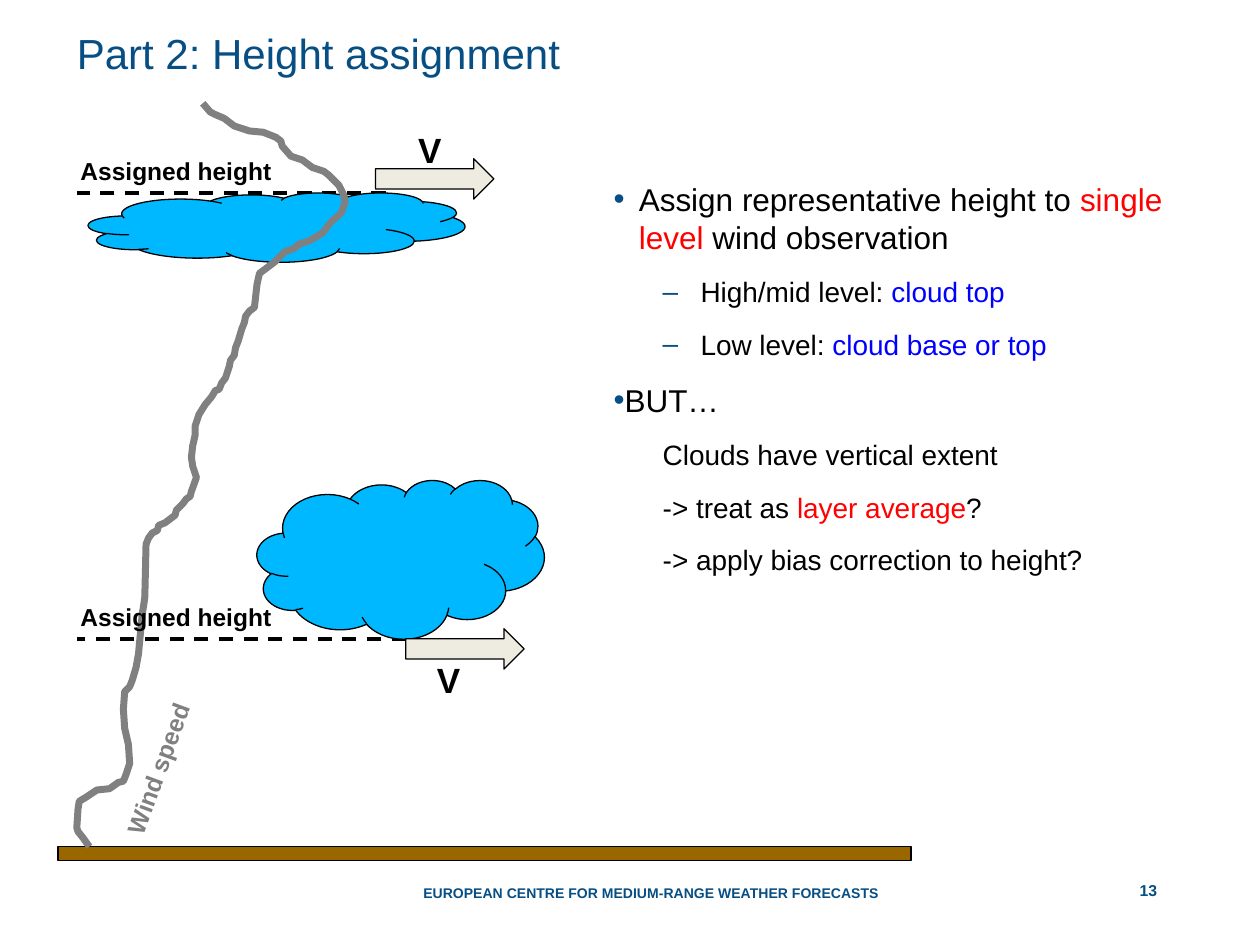
from dataclasses import dataclass, field

from lxml import etree
from pptx import Presentation
from pptx import util as u
from pptx.dml.color import RGBColor
from pptx.enum import dml, shapes, text
from pptx.oxml.ns import qn

FONT = "Arial"
BLACK, RED, BLUE = "000000", "FF0000", "0000FF"
NAVY, GREY = "064E83", "808080"
SKY, SOIL, CREAM = "00B8FF", "996600", "EEECE1"
PLAIN_FRAME = dict(margin_left=0, margin_top=0, margin_right=0, margin_bottom=0)


@dataclass
class Label:
    wording: str
    box: tuple
    size: float
    colour: str = BLACK
    rotation: float = 0
    align: text.PP_ALIGN = text.PP_ALIGN.LEFT
    frame: dict = field(default_factory=dict)


@dataclass
class Solid:
    kind: shapes.MSO_SHAPE
    box: tuple
    fill: str


@dataclass
class Style:
    size: int
    line: int
    before: int
    margin: float
    indent: float
    level: int = 0
    bullet: str = ""


TOPIC = Style(18, 22, 11, 0.2, -0.2, bullet="•")
SUBTOPIC = Style(16, 20, 10, 0.69, -0.3, 1, "–")
CONTRAST = Style(18, 22, 11, 0, -0.2, bullet="•")
REMARK = Style(16, 20, 10, 0.39, 0, 1)

BODY = [
    (TOPIC, [("Assign representative height to ", BLACK), ("single level", RED),
             (" wind observation", BLACK)]),
    (SUBTOPIC, [("High/mid level: ", BLACK), ("cloud top", BLUE)]),
    (SUBTOPIC, [("Low level:", BLACK), (" cloud base or top", BLUE)]),
    (CONTRAST, [("BUT…", BLACK)]),
    (REMARK, [("Clouds have vertical extent", BLACK)]),
    (REMARK, [("-> treat as ", BLACK), ("layer average", RED), ("?", BLACK)]),
    (REMARK, [("-> apply bias correction to height?", BLACK)]),
]

SOLIDS = [
    Solid(shapes.MSO_SHAPE.CLOUD, (0.7, 1.53, 2.99, 0.55), SKY),
    Solid(shapes.MSO_SHAPE.CLOUD, (2.04, 3.81, 2.28, 1.26), SKY),
    Solid(shapes.MSO_SHAPE.RECTANGLE, (0.46, 6.72, 6.77, 0.11), SOIL),
    Solid(shapes.MSO_SHAPE.RIGHT_ARROW, (3.22, 4.99, 0.94, 0.32), CREAM),
]
UPPER_ARROW = Solid(shapes.MSO_SHAPE.RIGHT_ARROW, (2.98, 1.26, 0.94, 0.32), CREAM)

GROW = dict(auto_size=text.MSO_AUTO_SIZE.SHAPE_TO_FIT_TEXT)
BOTTOM = dict(PLAIN_FRAME, vertical_anchor=text.MSO_ANCHOR.BOTTOM)
FOOTERS = [
    Label("EUROPEAN CENTRE FOR MEDIUM-RANGE WEATHER FORECASTS",
          (3.24, 6.9, 3.77, 0.25), 8, NAVY, frame=dict(BOTTOM, margin_left=u.Inches(0.12))),
    Label("13", (8.23, 6.9, 1.77, 0.24), 9, NAVY, align=text.PP_ALIGN.CENTER, frame=BOTTOM),
]
DIAGRAM_LABELS = [
    Label("V", (3.22, 0.97, 0.47, 0.44), 20, frame=GROW),
    Label("V", (3.37, 5.18, 0.47, 0.44), 20, frame=GROW),
    Label("Wind speed", (0.56, 5.86, 1.44, 0.34), 14, GREY, 290, frame=GROW),
    Label("Assigned height", (0.54, 4.73, 4.02, 0.34), 14, frame=GROW),
    Label("Assigned height", (0.54, 1.19, 4.02, 0.34), 14, frame=GROW),
]

# Wind speed against height, from the ground up, in hundredths of an inch
WIND_PROFILE = [
    (71, 672), (66, 665), (62, 660), (61, 657), (62, 642), (63, 636), (68, 633), (77, 627),
    (87, 626), (94, 621), (98, 620), (100, 615), (103, 606), (102, 591), (99, 578),
    (98, 563), (99, 549), (103, 545), (105, 540), (108, 530), (110, 519), (113, 487),
    (114, 481), (115, 474), (116, 432), (118, 427), (121, 423), (125, 421), (126, 417),
    (131, 415), (139, 409), (140, 405), (145, 400), (148, 396), (151, 394), (152, 390),
    (156, 379), (153, 370), (152, 363), (153, 354), (155, 345), (155, 338), (158, 329),
    (163, 321), (168, 315), (171, 310), (174, 309), (176, 304), (179, 300), (182, 291),
    (183, 286), (186, 282), (187, 276), (189, 271), (192, 261), (194, 256), (195, 251),
    (198, 247), (202, 244), (204, 226), (206, 217), (214, 211), (218, 208), (226, 200),
    (234, 197), (237, 194), (246, 191), (256, 185), (263, 176), (271, 169), (274, 160),
    (273, 155), (269, 147), (265, 143), (261, 139), (257, 136), (248, 133), (240, 127),
    (231, 124), (224, 116), (223, 112), (219, 109), (209, 105), (198, 104), (186, 100),
    (178, 94), (171, 91), (167, 89), (161, 82),
]


def rgb(colour: str) -> RGBColor:
    return RGBColor.from_string(colour)


def inches(box: tuple) -> list:
    return [u.Inches(length) for length in box]


def apply(target, settings: dict) -> None:
    for name, value in settings.items():
        setattr(target, name, value)


def add_run(paragraph, wording: str, size: float, colour: str, bold: bool = False) -> None:
    run = paragraph.add_run()
    run.text = wording
    apply(run.font, dict(name=FONT, size=u.Pt(size), bold=bold))
    run.font.color.rgb = rgb(colour)


def add_label(slide, label: Label) -> None:
    shape = slide.shapes.add_textbox(*inches(label.box))
    shape.rotation = label.rotation
    apply(shape.text_frame, dict(label.frame, word_wrap=True))
    paragraph = shape.text_frame.paragraphs[0]
    paragraph.alignment = label.align
    add_run(paragraph, label.wording, label.size, label.colour, bold=True)


def add_solid(slide, solid: Solid) -> None:
    shape = slide.shapes.add_shape(solid.kind, *inches(solid.box))
    shape.shadow.inherit = False
    shape.fill.solid()
    shape.fill.fore_color.rgb = rgb(solid.fill)
    shape.line.color.rgb = rgb(BLACK)
    shape.line.width = u.Pt(0.75)


def add_height_line(slide, right: float, height: float) -> None:
    line = slide.shapes.add_connector(
        shapes.MSO_CONNECTOR.STRAIGHT, *inches((right, height, 0.61, height)))
    line.line.color.rgb = rgb(BLACK)
    apply(line.line, dict(width=u.Pt(2), dash_style=dml.MSO_LINE.DASH))
    etree.SubElement(line._element.spPr, qn("a:effectLst"))


def add_wind_profile(slide) -> None:
    builder = slide.shapes.build_freeform(*WIND_PROFILE[0], scale=u.Inches(0.01))
    builder.add_line_segments(WIND_PROFILE[1:], close=False)
    shape = builder.convert_to_shape()
    shape.shadow.inherit = False
    shape.fill.background()
    shape.line.color.rgb = rgb(GREY)
    shape.line.width = u.Pt(4)


def format_paragraph(paragraph, style: Style, first: bool) -> None:
    apply(paragraph, dict(level=style.level, line_spacing=u.Pt(style.line),
                          space_before=u.Pt(0 if first else style.before)))
    properties = paragraph._p.get_or_add_pPr()
    properties.set("marL", str(u.Inches(style.margin)))
    properties.set("indent", str(u.Inches(style.indent)))
    if style.bullet:
        colour = etree.SubElement(properties, qn("a:buClr"))
        etree.SubElement(colour, qn("a:srgbClr"), val=NAVY)
        etree.SubElement(properties, qn("a:buFont"), typeface=FONT)
        etree.SubElement(properties, qn("a:buChar"), char=style.bullet)


def add_body(slide) -> None:
    frame = slide.shapes.add_textbox(*inches((4.87, 1.42, 4.73, 4.31))).text_frame
    apply(frame, dict(PLAIN_FRAME, word_wrap=True))
    for index, (style, runs) in enumerate(BODY):
        paragraph = frame.add_paragraph() if index else frame.paragraphs[0]
        format_paragraph(paragraph, style, first=index == 0)
        for wording, colour in runs:
            add_run(paragraph, wording, style.size, colour)


def set_title(slide, wording: str) -> None:
    title = slide.shapes.title
    apply(title, dict(zip(("left", "top", "width", "height"), inches((0.61, 0.23, 6.46, 0.4)))))
    apply(title.text_frame, dict(PLAIN_FRAME, word_wrap=True, auto_size=text.MSO_AUTO_SIZE.NONE,
                                 vertical_anchor=text.MSO_ANCHOR.TOP))
    paragraph = title.text_frame.paragraphs[0]
    apply(paragraph, dict(alignment=text.PP_ALIGN.LEFT, line_spacing=u.Pt(28)))
    add_run(paragraph, wording, 24, NAVY)


def main() -> None:
    presentation = Presentation()
    apply(presentation, dict(slide_width=u.Inches(10), slide_height=u.Inches(7.5)))
    slide = presentation.slides.add_slide(presentation.slide_layouts[5])
    set_title(slide, "Part 2: Height assignment")
    add_body(slide)
    for label in FOOTERS:
        add_label(slide, label)
    for right, height in ((3.06, 1.53), (3.22, 5.07)):
        add_height_line(slide, right, height)
    for solid in SOLIDS:
        add_solid(slide, solid)
    add_wind_profile(slide)
    for label in DIAGRAM_LABELS:
        add_label(slide, label)
    add_solid(slide, UPPER_ARROW)
    presentation.save("out.pptx")


if __name__ == "__main__":
    main()
